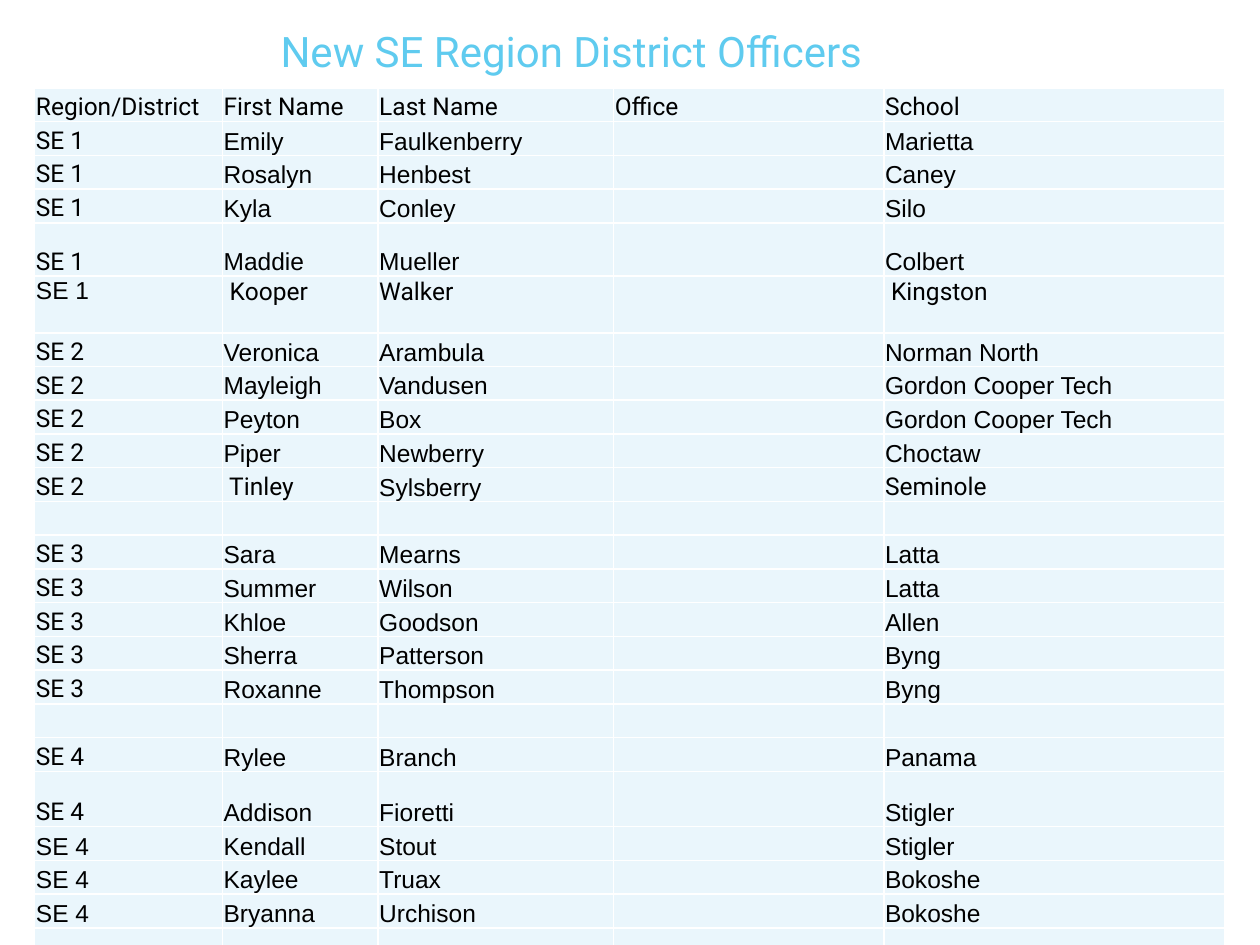
from typing import NamedTuple

import lxml.etree
import pptx
import pptx.dml.color
import pptx.enum.text
import pptx.oxml.ns
import pptx.util

COLORS = {"title": "5FCBEF", "text": "000000", "cell": "EAF6FC", "border": "FFFFFF"}
FONTS = {"R": "Roboto", "A": "Arial"}
ANCHOR = pptx.enum.text.MSO_ANCHOR

WIDTH, HEIGHT = pptx.util.Inches(10), pptx.util.Inches(7.5)
ROW_UNIT = HEIGHT / 28
COLUMN_PERCENTS = (14.9, 12.35, 18.7, 21.45, 27.1)
TEXT_SIZE = 14


class Row(NamedTuple):
    """One table row; fonts holds a FONTS key for each column, height is in row units."""
    district: str = ""
    first: str = ""
    last: str = ""
    school: str = ""
    office: str = ""
    fonts: str = "RAAAA"
    height: float = 1
    anchor: ANCHOR = ANCHOR.BOTTOM

    def texts(self) -> tuple[str, ...]:
        return self.district, self.first, self.last, self.office, self.school


ROWS = (
    Row("Region/District", "First Name", "Last Name", "School", "Office", fonts="RRRRR"),
    Row("SE 1", "Emily", "Faulkenberry", "Marietta"),
    Row("SE 1", "Rosalyn", "Henbest", "Caney"),
    Row("SE 1", "Kyla", "Conley", "Silo"),
    Row("SE 1", "Maddie", "Mueller", "Colbert", height=1.58),
    Row("SE 1", " Kooper", "Walker", " Kingston", fonts="ARRRR", height=1.68,
        anchor=ANCHOR.TOP),
    Row("SE 2", "Veronica", "Arambula", "Norman North"),
    Row("SE 2", "Mayleigh", "Vandusen", "Gordon Cooper Tech"),
    Row("SE 2", "Peyton", "Box", "Gordon Cooper Tech"),
    Row("SE 2", "Piper", "Newberry", "Choctaw"),
    Row("SE 2", " Tinley", "Sylsberry", "Seminole", fonts="RRAAR"),
    Row(),
    Row("SE 3", "Sara", "Mearns", "Latta"),
    Row("SE 3", "Summer", "Wilson", "Latta"),
    Row("SE 3", "Khloe", "Goodson", "Allen"),
    Row("SE 3", "Sherra", "Patterson", "Byng"),
    Row("SE 3", "Roxanne", "Thompson", "Byng"),
    Row(),
    Row("SE 4", "Rylee", "Branch", "Panama"),
    Row("SE 4", "Addison", "Fioretti", "Stigler", height=1.64),
    Row("SE 4", "Kendall", "Stout", "Stigler", fonts="AAAAA"),
    Row("SE 4", "Kaylee", "Truax", "Bokoshe", fonts="AAAAA"),
    Row("SE 4", "Bryanna", "Urchison", "Bokoshe", fonts="AAAAA"),
    Row(),
)


def rgb(name: str) -> pptx.dml.color.RGBColor:
    return pptx.dml.color.RGBColor.from_string(COLORS[name])


def add_run(p, text: str, font: str, size: float, color: str) -> None:
    r = p.add_run()
    r.text = text
    r.font.name = font
    r.font.size = pptx.util.Pt(size)
    r.font.color.rgb = rgb(color)


def add_borders(cell) -> None:
    qn = pptx.oxml.ns.qn
    tc_pr = cell._tc.get_or_add_tcPr()
    for side in ("lnL", "lnR", "lnT", "lnB"):
        ln = lxml.etree.SubElement(tc_pr, qn(f"a:{side}"), w=str(pptx.util.Pt(1)))
        fill = lxml.etree.SubElement(ln, qn("a:solidFill"))
        lxml.etree.SubElement(fill, qn("a:srgbClr"), val=COLORS["border"])


def fill_cell(cell, text: str, font: str, anchor: ANCHOR) -> None:
    cell.margin_left = cell.margin_right = cell.margin_top = pptx.util.Inches(0.01)
    cell.margin_bottom = 0
    cell.vertical_anchor = anchor
    add_borders(cell)
    cell.fill.solid()
    cell.fill.fore_color.rgb = rgb("cell")
    p = cell.text_frame.paragraphs[0]
    if text:
        add_run(p, text, font, TEXT_SIZE, "text")
    else:
        # An empty cell needs a text size too, or its row grows.
        lxml.etree.SubElement(p._p, pptx.oxml.ns.qn("a:endParaRPr"), sz=str(TEXT_SIZE * 100))


def add_title(slide) -> None:
    sp = slide.shapes.add_textbox(int(WIDTH * 0.095), int(HEIGHT * 0.02),
                                  int(WIDTH * 0.717), int(HEIGHT * 0.068))
    tf = sp.text_frame
    tf.word_wrap = True
    tf.vertical_anchor = ANCHOR.MIDDLE
    p = tf.paragraphs[0]
    p.alignment = pptx.enum.text.PP_ALIGN.CENTER
    add_run(p, "New SE Region District Officers", FONTS["R"], 24, "title")


def add_officer_table(slide) -> None:
    widths = [int(WIDTH * percent / 100) for percent in COLUMN_PERCENTS]
    heights = [int(ROW_UNIT * row.height) for row in ROWS]
    table = slide.shapes.add_table(len(ROWS), len(widths), int(WIDTH * 0.0275),
                                   int(HEIGHT * 0.093), sum(widths), sum(heights)).table
    table.first_row = table.horz_banding = False
    for column, width in zip(table.columns, widths):
        column.width = width
    for table_row, height, row in zip(table.rows, heights, ROWS):
        table_row.height = height
        for cell, text, font in zip(table_row.cells, row.texts(), row.fonts):
            fill_cell(cell, text, FONTS[font], row.anchor)


def main() -> None:
    prs = pptx.Presentation()
    prs.slide_width, prs.slide_height = WIDTH, HEIGHT
    slide = prs.slides.add_slide(prs.slide_layouts[6])
    add_title(slide)
    add_officer_table(slide)
    prs.save("out.pptx")


if __name__ == "__main__":
    main()
